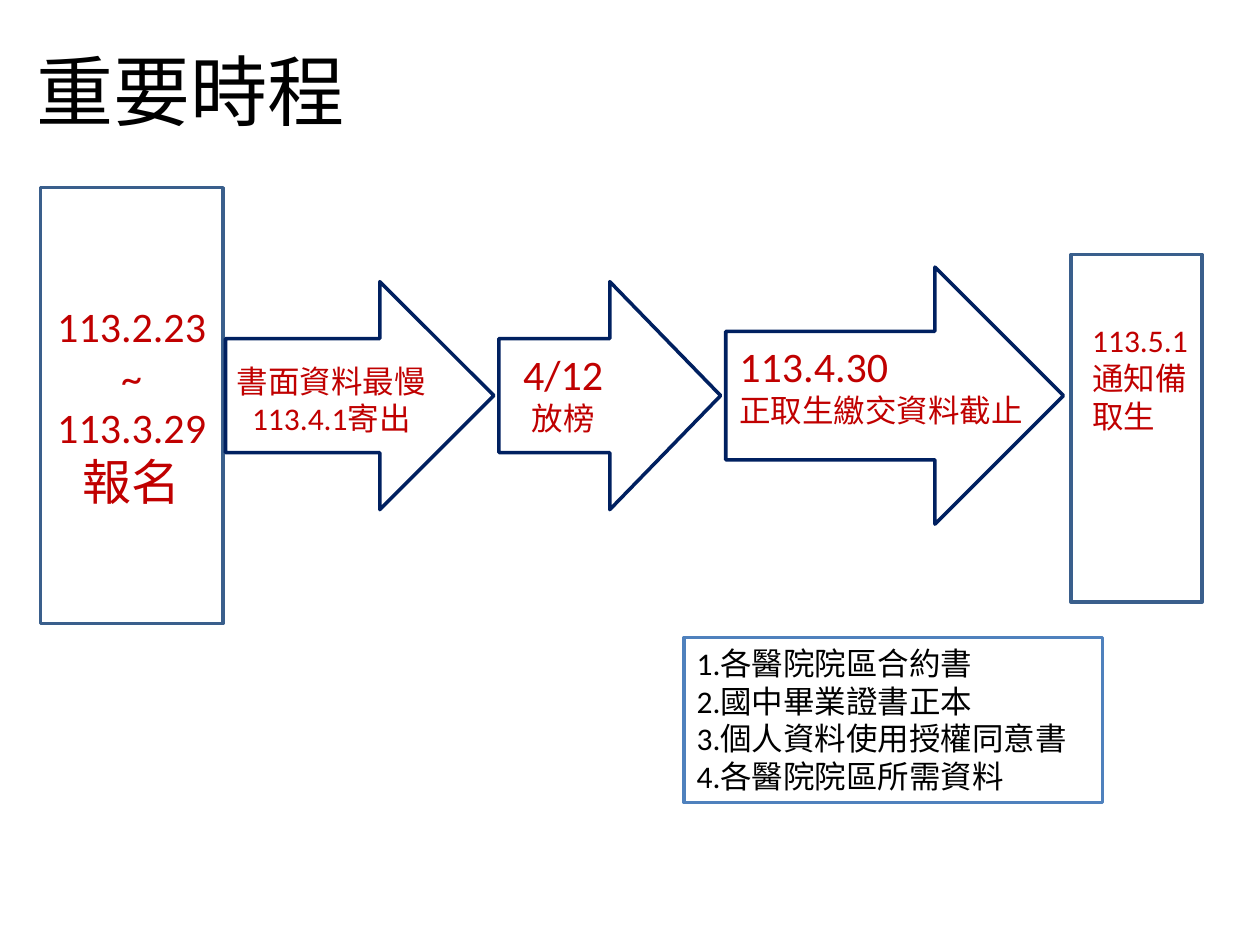
from dataclasses import dataclass

from lxml import etree
from pptx import Presentation
from pptx.dml.color import RGBColor
from pptx.enum.shapes import MSO_SHAPE
from pptx.enum.text import MSO_ANCHOR, MSO_AUTO_SIZE, PP_ALIGN
from pptx.oxml.ns import qn
from pptx.util import Inches, Pt

RECTANGLE = MSO_SHAPE.RECTANGLE
ARROW = MSO_SHAPE.RIGHT_ARROW
LEFT, CENTER = PP_ALIGN.LEFT, PP_ALIGN.CENTER
TOP, MIDDLE = MSO_ANCHOR.TOP, MSO_ANCHOR.MIDDLE
GROW, FIXED = MSO_AUTO_SIZE.SHAPE_TO_FIT_TEXT, MSO_AUTO_SIZE.NONE
TITLE_ONLY = 5


@dataclass(frozen=True)
class Theme:
    latin: str = "Calibri"
    asian: str = "Noto Sans CJK SC"
    black: str = "000000"
    white: str = "FFFFFF"
    date_red: str = "C00000"
    stage_line: str = "3A5F8C"
    arrow_line: str = "002060"
    list_line: str = "4F81BD"
    line_width: int = 2
    title: int = 44
    name: int = 28
    date: int = 24
    body: int = 18


THEME = Theme()


def color(value):
    return RGBColor.from_string(value)


def write_text(shape, lines, ink=THEME.date_red, font=THEME.latin, align=LEFT,
               anchor=TOP, wrap=True, fit=FIXED):
    frame = shape.text_frame
    frame.word_wrap = wrap
    frame.auto_size = fit
    frame.vertical_anchor = anchor
    for index, (text, size) in enumerate(lines):
        para = frame.add_paragraph() if index else frame.paragraphs[0]
        para.alignment = align
        span = para.add_run()
        span.text = text
        span.font.name = font
        span.font.size = Pt(size)
        span.font.color.rgb = color(ink)
        east_asian = etree.Element(qn("a:ea"), typeface=THEME.asian)
        span.font._element.find(qn("a:latin")).addnext(east_asian)


def set_title(page, text, area):
    title = page.shapes.title
    title.left, title.top, title.width, title.height = map(Inches, area)
    write_text(title, [(text, THEME.title)], ink=THEME.black,
               font=THEME.asian, anchor=MIDDLE)


def add_outline(page, kind, area, line, fill=None):
    shape = page.shapes.add_shape(kind, *map(Inches, area))
    shape.shadow.inherit = False
    if fill:
        shape.fill.solid()
        shape.fill.fore_color.rgb = color(fill)
    else:
        shape.fill.background()
    shape.line.color.rgb = color(line)
    shape.line.width = Pt(THEME.line_width)
    return shape


def add_label(page, area, lines, **text_format):
    box = page.shapes.add_textbox(*map(Inches, area))
    write_text(box, lines, fit=GROW, **text_format)


def main():
    deck = Presentation()
    deck.slide_width, deck.slide_height = Inches(10), Inches(7.5)
    page = deck.slides.add_slide(deck.slide_layouts[TITLE_ONLY])
    set_title(page, "重要時程", (0.19, 0.09, 9, 1.25))

    signup = add_outline(page, RECTANGLE, (0.32, 1.49, 1.45, 3.46), THEME.stage_line)
    write_text(signup, [("113.2.23", THEME.date), ("~", THEME.date),
                        ("113.3.29", THEME.date), ("報名", THEME.name)],
               align=CENTER, anchor=MIDDLE)
    add_outline(page, RECTANGLE, (8.5, 2.02, 1.04, 2.76), THEME.stage_line)

    arrow_middle = 3.14
    for left, width, height in [(1.79, 2.13, 1.81), (3.96, 1.76, 1.81), (5.76, 2.68, 2.04)]:
        area = (left, arrow_middle - height / 2, width, height)
        add_outline(page, ARROW, area, THEME.arrow_line)

    add_label(page, (1.77, 2.82, 1.72, 0.71),
              [("書面資料最慢", THEME.body), ("113.4.1寄出", THEME.body)],
              align=CENTER, wrap=False)
    add_label(page, (4.05, 2.72, 0.84, 0.81),
              [("4/12", THEME.date), ("放榜", THEME.body)], align=CENTER, wrap=False)
    add_label(page, (5.77, 2.65, 2.52, 0.81),
              [("113.4.30", THEME.date), ("正取生繳交資料截止", THEME.body)])
    add_label(page, (8.57, 2.5, 1.04, 1.01),
              [("113.5.1", THEME.body), ("通知備取生", THEME.body)])

    documents = ["各醫院院區合約書", "國中畢業證書正本",
                 "個人資料使用授權同意書", "各醫院院區所需資料"]
    checklist = add_outline(page, RECTANGLE, (5.43, 5.06, 3.32, 1.31),
                            THEME.list_line, fill=THEME.white)
    write_text(checklist, [(f"{number}.{name}", THEME.body)
                           for number, name in enumerate(documents, 1)],
               ink=THEME.black, fit=GROW)

    deck.save("out.pptx")


if __name__ == "__main__":
    main()
